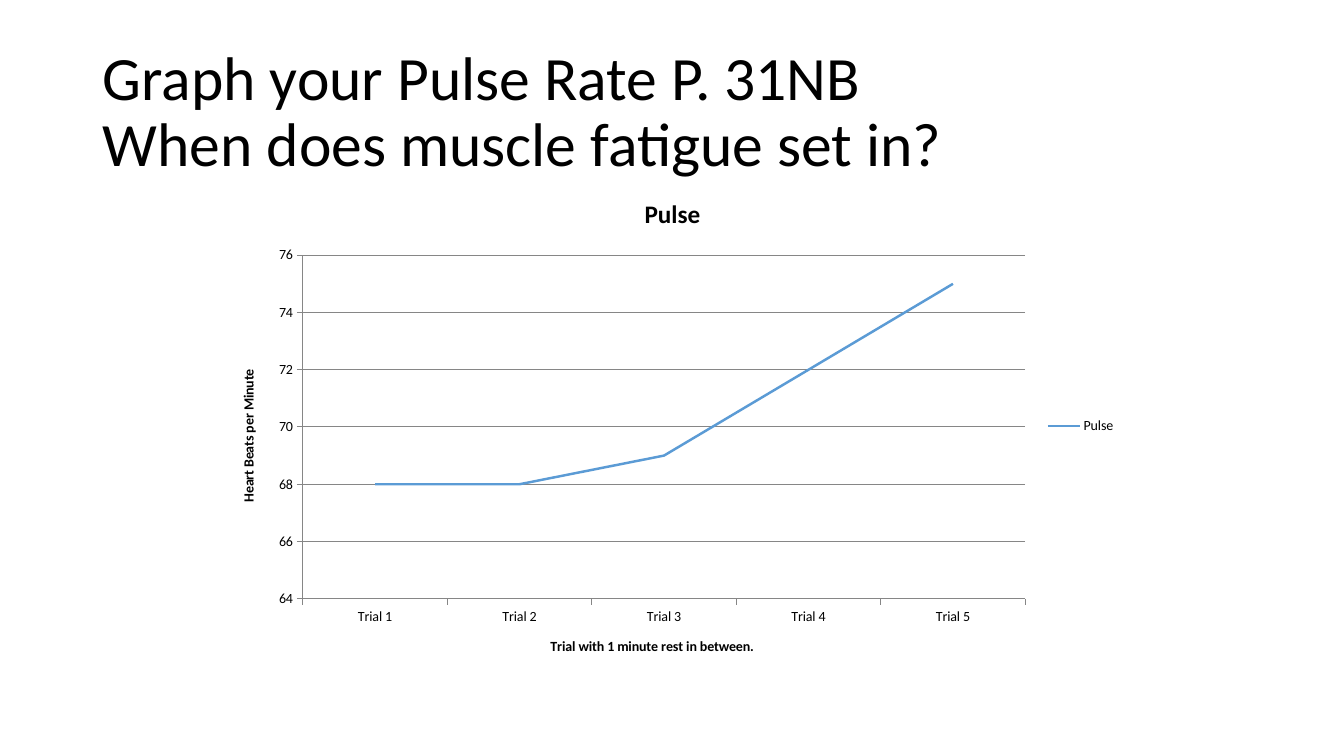
from pptx import Presentation
from pptx.chart.data import CategoryChartData
from pptx.dml.color import RGBColor
from pptx.enum.chart import XL_CHART_TYPE, XL_LEGEND_POSITION, XL_TICK_MARK
from pptx.enum.text import MSO_ANCHOR, PP_ALIGN
from pptx.util import Inches, Pt

TITLE_LINES = ["Graph your Pulse Rate P. 31NB", "When does muscle fatigue set in?"]
TITLE_BOX = (0.92, 0.4, 11.5, 1.45)
CHART_BOX = (2.17, 1.75, 9, 4.95)
PULSE = {"Trial 1": 68, "Trial 2": 68, "Trial 3": 69, "Trial 4": 72, "Trial 5": 75}
SERIES_NAME = "Pulse"
CATEGORY_TITLE = "Trial with 1 minute rest in between."
VALUE_TITLE = "Heart Beats per Minute"
VALUE_SCALE = {"minimum_scale": 64, "maximum_scale": 76, "major_unit": 2}
BLACK, GRAY, BLUE = "000000", "868686", "5B9BD5"
TITLE_FONT = {"name": "Calibri", "size": Pt(44), "bold": False}
CHART_FONT = {"name": "Calibri", "size": Pt(10), "bold": False}
AXIS_FONT = {"name": "Calibri", "size": Pt(10), "bold": True}
HEADING_FONT = {"name": "Calibri", "size": Pt(18), "bold": True}


def rgb(color):
    return RGBColor.from_string(color)


def set_attrs(obj, values):
    for name, value in values.items():
        setattr(obj, name, value)


def style_font(font, values):
    set_attrs(font, values)
    font.color.rgb = rgb(BLACK)


def style_line(line, color, width):
    line.color.rgb = rgb(color)
    line.width = Pt(width)


def add_heading(owner, text, values):
    """Give a chart or an axis its title."""
    tf = (owner.chart_title if hasattr(owner, "chart_title") else owner.axis_title).text_frame
    tf.text = text
    style_font(tf.paragraphs[0].runs[0].font, values)


def add_title(s):
    title = s.shapes.title
    set_attrs(title, dict(zip(("left", "top", "width", "height"), map(Inches, TITLE_BOX))))
    tf = title.text_frame
    set_attrs(tf, {"word_wrap": True, "vertical_anchor": MSO_ANCHOR.MIDDLE})
    p = tf.paragraphs[0]
    p.text = "\v".join(TITLE_LINES)
    set_attrs(p, {"alignment": PP_ALIGN.LEFT, "line_spacing": 0.9})
    for r in p.runs:
        style_font(r.font, TITLE_FONT)


def add_pulse_chart(s):
    data = CategoryChartData()
    data.categories = list(PULSE)
    data.add_series(SERIES_NAME, list(PULSE.values()))
    chart = s.shapes.add_chart(XL_CHART_TYPE.LINE, *map(Inches, CHART_BOX), data).chart
    style_font(chart.font, CHART_FONT)
    add_heading(chart, SERIES_NAME, HEADING_FONT)

    chart.has_legend = True
    set_attrs(chart.legend, {"position": XL_LEGEND_POSITION.RIGHT, "include_in_layout": False})

    for axis, text in ((chart.category_axis, CATEGORY_TITLE), (chart.value_axis, VALUE_TITLE)):
        add_heading(axis, text, AXIS_FONT)
        axis.major_tick_mark = XL_TICK_MARK.OUTSIDE
        style_line(axis.format.line, GRAY, 0.75)
    set_attrs(chart.value_axis, VALUE_SCALE)
    chart.value_axis.has_major_gridlines = True
    style_line(chart.value_axis.major_gridlines.format.line, GRAY, 0.75)

    chart.plots[0].vary_by_categories = False
    series = chart.plots[0].series[0]
    series.smooth = False
    style_line(series.format.line, BLUE, 1.75)


def main():
    prs = Presentation()
    set_attrs(prs, {"slide_width": Inches(13.33), "slide_height": Inches(7.5)})
    s = prs.slides.add_slide(prs.slide_layouts[5])
    add_title(s)
    add_pulse_chart(s)
    prs.save("out.pptx")


if __name__ == "__main__":
    main()
